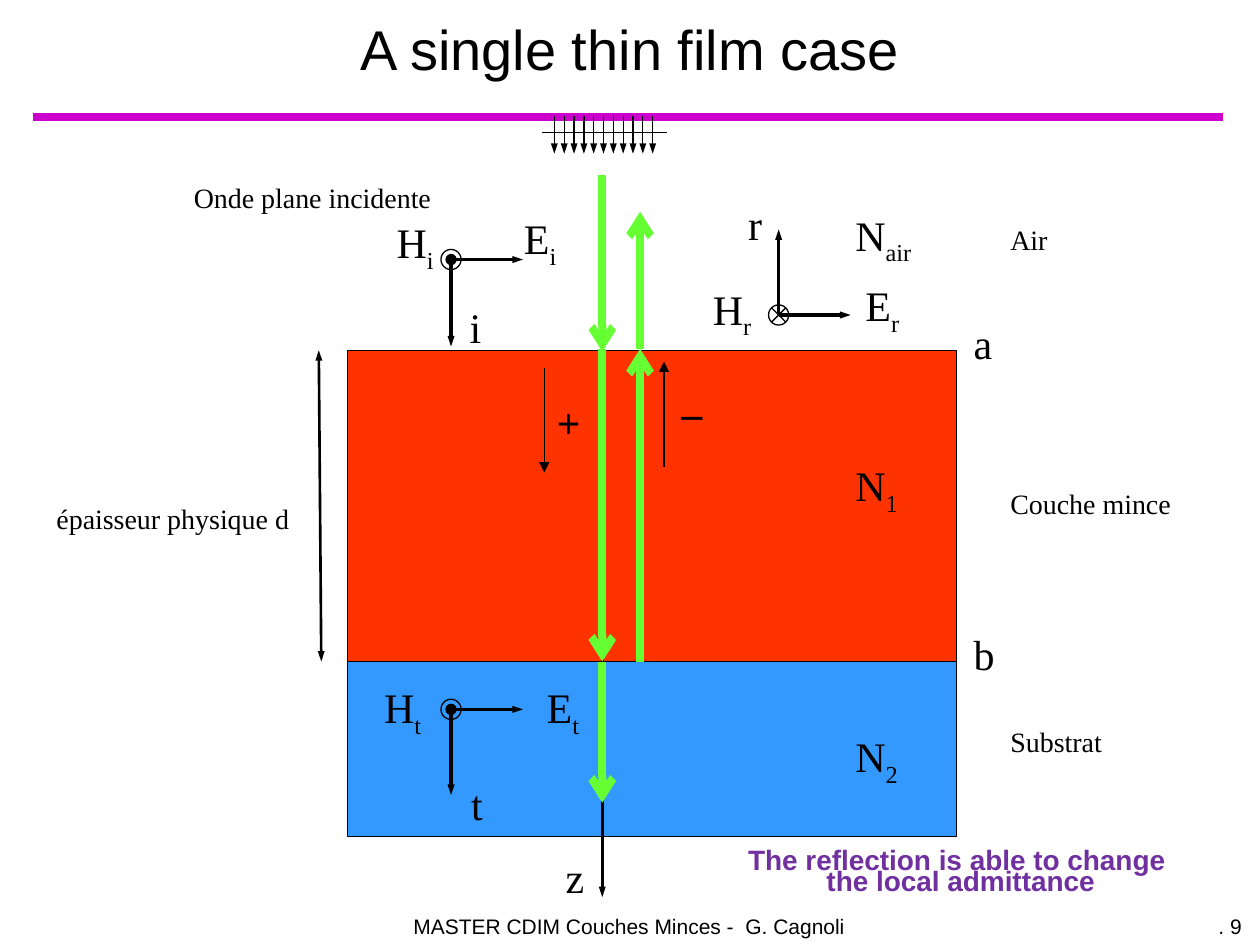
from lxml.etree import SubElement
from pptx import Presentation
from pptx.dml.color import RGBColor
from pptx.enum.shapes import MSO_CONNECTOR as Conn, MSO_SHAPE as Shape
from pptx.enum.text import MSO_ANCHOR as Anchor, PP_ALIGN as Align
from pptx.oxml.ns import qn
from pptx.util import Inches, Pt

BLACK = RGBColor(0x00, 0x00, 0x00)
MAGENTA = RGBColor(0xCC, 0x00, 0xCC)
RED = RGBColor(0xFF, 0x33, 0x00)
BLUE = RGBColor(0x33, 0x99, 0xFF)
GREEN = RGBColor(0x66, 0xFF, 0x33)
PURPLE = RGBColor(0x70, 0x30, 0xA0)
SERIF, SANS = "Times New Roman", "Arial"

# Slide grid: 10 columns by 7.5 rows
COLS, ROWS = 10, 7.5
WIDTH, HEIGHT = Inches(10), Inches(7.5)


def gx(cols):
    return int(WIDTH * cols / COLS)


def gy(rows):
    return int(HEIGHT * rows / ROWS)


def add_run(p, text, size, font=SERIF, color=BLACK, bold=False, sub=False):
    r = p.add_run()
    r.text = text
    r.font.size, r.font.name, r.font.bold = Pt(size), font, bold
    r.font.color.rgb = color
    if sub:
        r.font._element.set("baseline", "-25000")


def add_label(s, x, y, text, sub="", size=24, w=0.6, h=0.5, font=SERIF,
              bold=False, align=Align.LEFT, spacing=None, color=BLACK):
    """Text box; each line of the text ends with a line break but the last."""
    tf = s.shapes.add_textbox(gx(x), gy(y), gx(w), gy(h)).text_frame
    tf.word_wrap = True
    if align == Align.LEFT:
        tf.margin_right = 0
    p = tf.paragraphs[0]
    p.alignment = align
    if spacing:
        p.line_spacing = spacing
    for i, line in enumerate(text.split("\n")):
        if i:
            p.add_line_break()
        add_run(p, line, size, font, color, bold)
    if sub:
        add_run(p, sub, size, font, color, bold, sub=True)


def add_line(s, x1, y1, x2, y2, width, color=BLACK, tail=None, head=None, narrow=True):
    c = s.shapes.add_connector(Conn.STRAIGHT, gx(x1), gy(y1), gx(x2), gy(y2))
    c.line.color.rgb, c.line.width = color, Pt(width)
    ln = c.line._get_or_add_ln()
    for tag, kind in (("a:headEnd", head), ("a:tailEnd", tail)):
        if kind:
            end = SubElement(ln, qn(tag), type=kind)
            if narrow:
                end.set("w", "sm")
    SubElement(c._element.spPr, qn("a:effectLst"))


def add_shape(s, kind, x, y, w, h, fill=None):
    sp = s.shapes.add_shape(kind, gx(x), gy(y), gx(w), gy(h))
    sp.shadow.inherit = False
    if fill is None:
        sp.fill.background()
    else:
        sp.fill.solid()
        sp.fill.fore_color.rgb = fill
    sp.line.color.rgb, sp.line.width = BLACK, Pt(0.75)


def add_circle(s, x, y, d, fill=None):
    add_shape(s, Shape.OVAL, x - d / 2, y - d / 2, d, d, fill)


def title_region(s, box):
    x, y, w, h = box
    t = s.shapes.title
    t.left, t.top, t.width, t.height = gx(x), gy(y), gx(w), gy(h)
    tf = t.text_frame
    tf.vertical_anchor = Anchor.MIDDLE
    p = tf.paragraphs[0]
    p.alignment, p.line_spacing = Align.CENTER, Pt(30)
    add_run(p, "A single thin film case", 32, SANS)
    add_line(s, x + 0.26, y + h + 0.05, x + w - 0.29, y + h + 0.05, 4.5, MAGENTA)


def footer_region(s, box):
    x, y, w, h = box
    add_label(s, x + 2.68, y, "MASTER CDIM Couches Minces -  G. Cagnoli", size=12,
              w=4.63, h=h, font=SANS, align=Align.CENTER)
    add_label(s, x + w - 0.63, y, ". 9 ", size=12, w=0.63, h=h, font=SANS,
              align=Align.RIGHT)


def layers_region(s, box):
    """Film on substrate, with indices, interfaces, names and thickness."""
    x, y, w, h = box
    film = 2.47
    add_shape(s, Shape.RECTANGLE, x, y, w, film, RED)
    add_shape(s, Shape.RECTANGLE, x, y + film, w, h - film, BLUE)
    for sub, dy in (("air", -1.17), ("1", 0.82), ("2", 2.97)):
        add_label(s, x + 3.93, y + dy, "N", sub, w=0.7)
    for name, dy in (("a", -0.31), ("b", 2.16)):
        add_label(s, x + w + 0.04, y + dy, name)
    for name, dy in (("Air", -1.06), ("Couche mince", 1.03), ("Substrat", 2.92)):
        add_label(s, x + w + 0.33, y + dy, name, size=16, w=1.61, h=0.37)
    add_line(s, x - 0.23, y, x - 0.21, y + film, 1.5, tail="triangle", head="triangle")
    add_label(s, x - 2.41, y + 1.15, "épaisseur physique d", size=16, w=2.06, h=0.37)


def plane_wave_region(s, box):
    """Wavefront crossed by equally spaced small arrows."""
    x, y, w, h = box
    count, step = 11, 0.078
    add_line(s, x, y + 0.13, x + w, y + 0.13, 0.75)
    for i in range(count):
        ax = x + 0.1 + i * step
        add_line(s, ax, y, ax, y + h, 0.75, tail="triangle")
    add_label(s, x - 2.86, y + 0.58, "Onde plane incidente", size=16, w=2.23,
              h=0.23, spacing=0.5)


def rays_region(s, box):
    """Axis z, light going down on the left and up on the right."""
    x, y, w, h = box
    right, top, bottom = x + w, y + 1.38, y + 3.86
    add_line(s, x, y + 0.43, x, y + h, 1.5, tail="triangle")
    add_label(s, x - 0.39, y + h - 0.41, "z")
    for rx, start, end in ((x, y, top + 0.02), (right, top, y + 0.29),
                           (x, bottom, y + 4.98), (x, top, bottom),
                           (right, bottom, top)):
        add_line(s, rx, start, rx, end, 4.5, GREEN, tail="arrow", narrow=False)
    # Positive and negative directions
    for ax, start, end in ((x - 0.46, 2.92, 3.75), (right + 0.19, 3.71, 2.87)):
        add_line(s, ax, start, ax, end, 0.75, tail="triangle", narrow=False)
    add_label(s, x - 0.46, y + 1.71, "+", bold=True)
    add_label(s, right + 0.23, y + 1.52, "_", bold=True)


def field_region(s, origin, wave, reach, e_at, h_at, k_at, outward=True):
    """E, H and propagation axes; H leaves or enters the plane at the origin."""
    x, y = origin
    add_circle(s, x, y, 0.16)
    if outward:
        add_circle(s, x, y, 0.08, BLACK)
    else:
        d = 0.055
        for sign in (1, -1):
            add_line(s, x - d, y - sign * d, x + d, y + sign * d, 0.75)
    add_line(s, x, y, x, y + reach, 2, tail="triangle")
    add_line(s, x, y, x + 0.57, y, 2, tail="triangle")
    for text, sub, (dx, dy) in (("E", wave, e_at), ("H", wave, h_at), (wave, "", k_at)):
        add_label(s, x + dx, y + dy, text, sub)


def main():
    prs = Presentation()
    prs.slide_width, prs.slide_height = WIDTH, HEIGHT
    s = prs.slides.add_slide(prs.slide_layouts[5])
    title_region(s, (0, 0, COLS, 0.88))
    footer_region(s, (0, 7.2, COLS, 0.3))
    layers_region(s, (2.76, 2.78, 4.83, 3.86))
    plane_wave_region(s, (4.3, 0.92, 0.99, 0.3))
    rays_region(s, (4.78, 1.39, 0.3, 5.73))
    # Incident, transmitted and reflected fields
    field_region(s, (3.58, 2.06), "i", 0.69, (0.48, -0.42), (-0.53, -0.39), (0.05, 0.28))
    field_region(s, (3.58, 5.63), "t", 0.68, (0.66, -0.27), (-0.63, -0.27), (0.06, 0.5))
    field_region(s, (6.18, 2.5), "r", -0.68, (0.59, -0.33), (-0.62, -0.3),
                 (-0.34, -0.97), outward=False)
    # Conclusion
    add_label(s, 5.78, 6.74, "The reflection is able to change \nthe local admittance",
              size=16, w=3.69, h=0.44, font=SANS, bold=True, align=Align.CENTER,
              spacing=Pt(12), color=PURPLE)
    prs.save("out.pptx")


if __name__ == "__main__":
    main()
